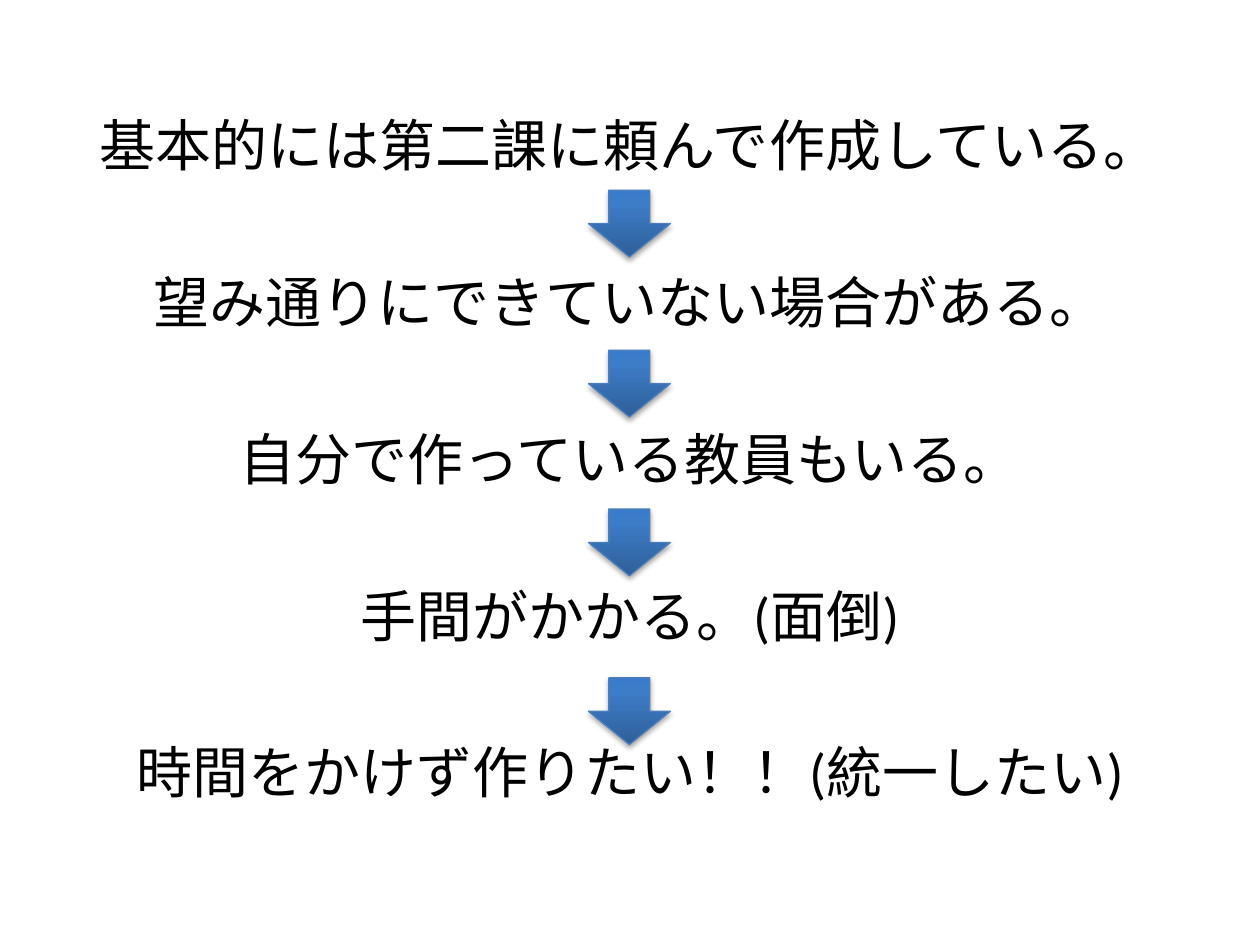
from lxml import etree
from pptx import Presentation
from pptx.dml.color import RGBColor
from pptx.enum.shapes import MSO_SHAPE
from pptx.enum.text import MSO_ANCHOR, PP_ALIGN
from pptx.oxml import parse_xml
from pptx.oxml.ns import nsdecls, qn
from pptx.util import Inches, Pt

DOWN_ARROW = MSO_SHAPE.DOWN_ARROW
CENTER = PP_ALIGN.CENTER
TOP = MSO_ANCHOR.TOP

STEPS = [
    "基本的には第二課に頼んで作成している。",
    "望み通りにできていない場合がある。",
    "自分で作っている教員もいる。",
    "手間がかかる。(面倒)",
    "時間をかけず作りたい！！(統一したい)",
]
ARROW_TOPS = [1.51, 2.78, 4.04, 5.38]
ARROW_LEFT, ARROW_WIDTH, ARROW_HEIGHT = 4.67, 0.65, 0.53

COLORS = {"text": "000000", "line": "4B7EBC", "shadow": "000000"}
GRADIENT = [(0, "2F5F99"), (80, "3D7CC7"), (100, "3A7CCB")]

LINE_HEIGHT = 39
STEP_PITCH = 89.6


def write_paragraph(paragraph, text, *, size, color, font, space_before):
    paragraph.alignment = CENTER
    paragraph.line_spacing = Pt(LINE_HEIGHT)
    paragraph.space_before = Pt(space_before)
    properties = paragraph._p.get_or_add_pPr()
    properties.set("marL", str(Inches(0.38)))
    properties.set("indent", str(Inches(-0.38)))
    etree.SubElement(properties, qn("a:buNone"))
    run = paragraph.add_run()
    run.text = text
    run.font.size = Pt(size)
    run.font.name = font
    run.font.color.rgb = RGBColor.from_string(color)


def add_steps(slide):
    body = slide.placeholders[1]
    body.left, body.top = Inches(0.5), Inches(0.82)
    body.width, body.height = Inches(9), Inches(5.95)
    frame = body.text_frame
    frame.word_wrap = True
    frame.vertical_anchor = TOP
    for index, text in enumerate(STEPS):
        paragraph = frame.add_paragraph() if index else frame.paragraphs[0]
        write_paragraph(paragraph, text, size=32, color=COLORS["text"], font="Calibri",
                        space_before=STEP_PITCH - LINE_HEIGHT if index else 0)


def add_arrow(slide, top):
    arrow = slide.shapes.add_shape(DOWN_ARROW, Inches(ARROW_LEFT), Inches(top),
                                   Inches(ARROW_WIDTH), Inches(ARROW_HEIGHT))
    arrow.line.color.rgb = RGBColor.from_string(COLORS["line"])
    arrow.line.width = Pt(0.75)
    arrow.fill.gradient()
    arrow.fill.gradient_angle = 90
    stops = arrow._element.spPr.find(qn("a:gradFill")).find(qn("a:gsLst"))
    for stop in list(stops):
        stops.remove(stop)
    for position, color in GRADIENT:
        stop = etree.SubElement(stops, qn("a:gs"), pos=str(position * 1000))
        etree.SubElement(stop, qn("a:srgbClr"), val=color)
    arrow._element.spPr.append(parse_xml(
        f'<a:effectLst {nsdecls("a")}>'
        f'<a:outerShdw blurRad="{Pt(3.1)}" dist="{Pt(1.8)}" dir="5400000" rotWithShape="0">'
        f'<a:srgbClr val="{COLORS["shadow"]}"><a:alpha val="35000"/></a:srgbClr>'
        '</a:outerShdw></a:effectLst>'))


def main():
    presentation = Presentation()
    presentation.slide_width, presentation.slide_height = Inches(10), Inches(7.5)
    slide = presentation.slides.add_slide(presentation.slide_layouts[1])
    title = slide.shapes.title._element
    title.getparent().remove(title)
    add_steps(slide)
    for top in ARROW_TOPS:
        add_arrow(slide, top)
    presentation.save("out.pptx")


if __name__ == "__main__":
    main()
